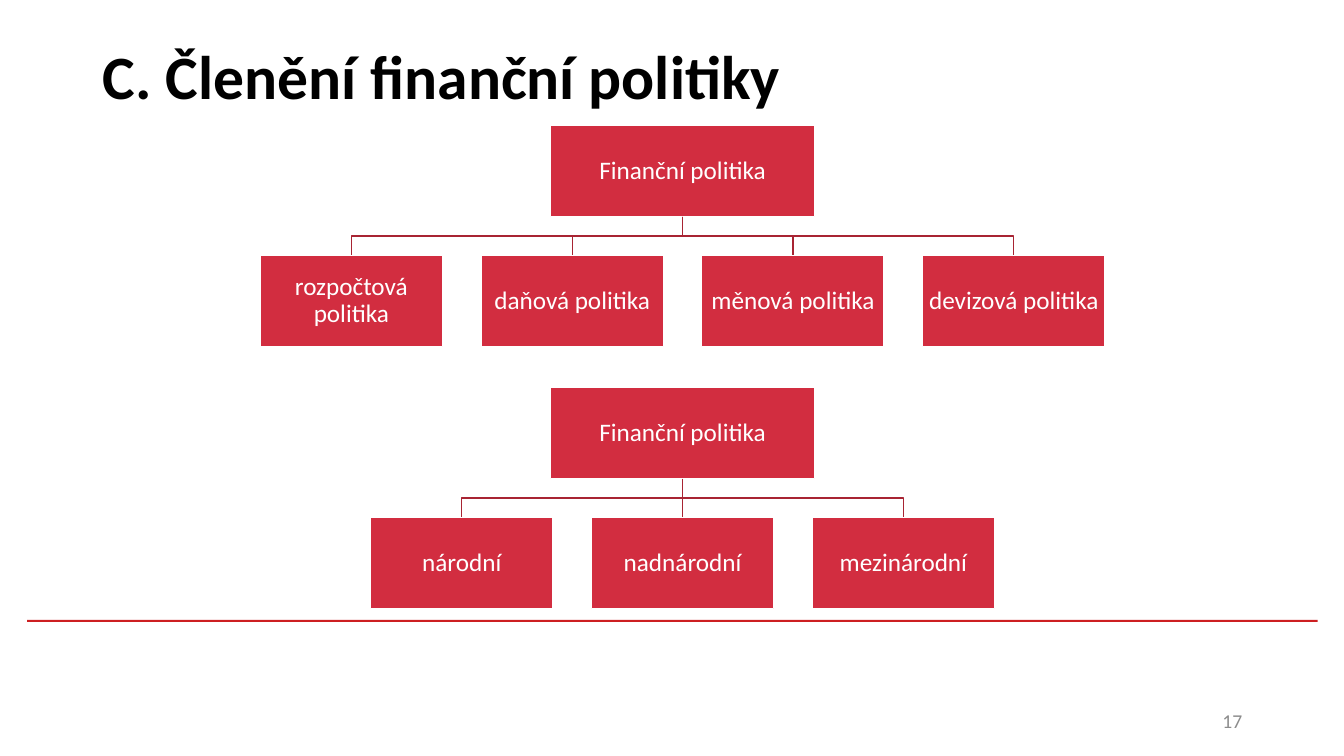
from dataclasses import dataclass

from lxml import etree
from pptx import Presentation
from pptx.dml.color import RGBColor
from pptx.enum.shapes import MSO_CONNECTOR, MSO_SHAPE
from pptx.enum.text import MSO_ANCHOR, MSO_AUTO_SIZE, PP_ALIGN
from pptx.oxml.ns import qn
from pptx.util import Inches, Pt

RECTANGLE = MSO_SHAPE.RECTANGLE
STRAIGHT = MSO_CONNECTOR.STRAIGHT
MIDDLE = MSO_ANCHOR.MIDDLE
LEFT, CENTER, RIGHT = PP_ALIGN.LEFT, PP_ALIGN.CENTER, PP_ALIGN.RIGHT
BOTTOM_SITE, TOP_SITE = 2, 0

# Content
TITLE = "C. Členění finanční politiky"
PAGE_NUMBER = "17"
TREES = [  # top, root, branches
    (1.24, "Finanční politika",
     ["rozpočtová politika", "daňová politika", "měnová politika", "devizová politika"]),
    (3.84, "Finanční politika", ["národní", "nadnárodní", "mezinárodní"]),
]


@dataclass(frozen=True)
class Theme:
    font: str = "Calibri"
    title_size: int = 44
    box_size: int = 18
    number_size: int = 14
    black: str = "000000"
    white: str = "FFFFFF"
    gray: str = "8C8C8C"
    box: str = "D22D40"
    branch: str = "A82433"
    rule: str = "CD1F21"


THEME = Theme()

# Tree geometry in inches
TREE_CENTER = 6.77
ROOT_WIDTH, BRANCH_WIDTH, BOX_HEIGHT = 2.62, 1.81, 0.91
BRANCH_STEP = 2.19
LEVEL_GAP = 0.38


def color(name):
    return RGBColor.from_string(name)


def write(frame, text, size, ink, align, bold=False):
    frame.text = text
    frame.word_wrap = True
    frame.vertical_anchor = MIDDLE
    paragraph = frame.paragraphs[0]
    paragraph.alignment = align
    paragraph.font.name = THEME.font
    paragraph.font.size = Pt(size)
    paragraph.font.bold = bold
    paragraph.font.color.rgb = color(ink)
    return paragraph


def add_box(shapes, center, top, width, text):
    box = shapes.add_shape(RECTANGLE, Inches(center - width / 2), Inches(top),
                           Inches(width), Inches(BOX_HEIGHT))
    box.shadow.inherit = False
    box.fill.solid()
    box.fill.fore_color.rgb = color(THEME.box)
    box.line.color.rgb = color(THEME.white)
    box.line.width = Pt(1)
    frame = box.text_frame
    frame.margin_left = frame.margin_right = Inches(0.01)
    frame.margin_top = frame.margin_bottom = Inches(0.01)
    write(frame, text, THEME.box_size, THEME.white, CENTER).line_spacing = 0.9
    return box


def add_branch_line(shapes, root, branch, center, top):
    bottom = top + LEVEL_GAP
    if center == TREE_CENTER:
        line = shapes.add_connector(STRAIGHT, Inches(center), Inches(top),
                                    Inches(center), Inches(bottom))
        line.begin_connect(root, BOTTOM_SITE)
        line.end_connect(branch, TOP_SITE)
        etree.SubElement(line._element.spPr, qn("a:effectLst"))
    else:
        bend = top + LEVEL_GAP / 2
        corners = [(TREE_CENTER, bend), (center, bend), (center, bottom)]
        elbow = shapes.build_freeform(Inches(TREE_CENTER), Inches(top))
        elbow.add_line_segments([(Inches(x), Inches(y)) for x, y in corners], close=False)
        line = elbow.convert_to_shape()
        line.shadow.inherit = False
        line.fill.background()
    line.line.color.rgb = color(THEME.branch)
    line.line.width = Pt(1)


def add_tree(shapes, top, root_text, branch_texts):
    root = add_box(shapes, TREE_CENTER, top, ROOT_WIDTH, root_text)
    root_bottom = top + BOX_HEIGHT
    for index, text in enumerate(branch_texts):
        center = TREE_CENTER + (index - (len(branch_texts) - 1) / 2) * BRANCH_STEP
        branch = add_box(shapes, center, root_bottom + LEVEL_GAP, BRANCH_WIDTH, text)
        add_branch_line(shapes, root, branch, center, root_bottom)


def main():
    deck = Presentation()
    deck.slide_width, deck.slide_height = Inches(13.33), Inches(7.5)
    slide = deck.slides.add_slide(deck.slide_layouts[5])
    shapes = slide.shapes

    # Rule above the footer
    rule = shapes.add_shape(RECTANGLE, Inches(0.27), Inches(6.15), Inches(12.8), Inches(0.02))
    rule.shadow.inherit = False
    rule.fill.solid()
    rule.fill.fore_color.rgb = color(THEME.rule)
    rule.line.fill.background()

    # Title
    title = shapes.title
    title.left, title.top = Inches(0.92), Inches(0.02)
    title.width, title.height = Inches(11.5), Inches(1.45)
    write(title.text_frame, TITLE, THEME.title_size, THEME.black, LEFT, bold=True)
    title.text_frame.auto_size = MSO_AUTO_SIZE.NONE

    # Page number
    number = shapes.add_textbox(Inches(9.42), Inches(6.95), Inches(3), Inches(0.4))
    write(number.text_frame, PAGE_NUMBER, THEME.number_size, THEME.gray, RIGHT)

    # Policy trees
    for top, root_text, branch_texts in TREES:
        add_tree(shapes, top, root_text, branch_texts)

    deck.save("out.pptx")


if __name__ == "__main__":
    main()
